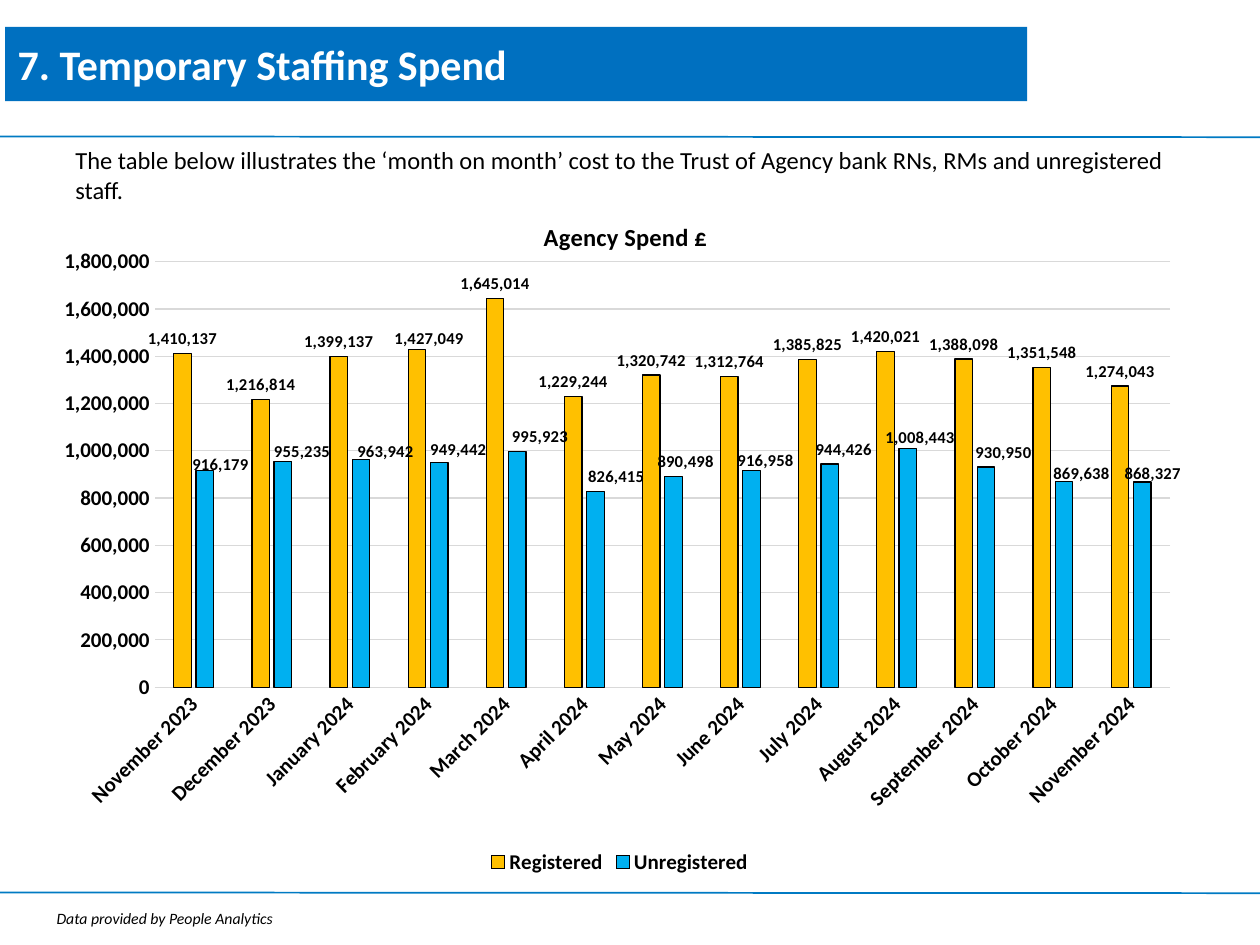
from lxml import etree
from pptx import Presentation
from pptx import util as u
from pptx.chart.data import CategoryChartData
from pptx.dml.color import RGBColor
from pptx.enum import chart as ch, shapes, text
from pptx.oxml import parse_xml
from pptx.oxml.ns import nsdecls, qn

Pt = u.Pt
THEME = dict(font="Calibri", ink="000000", white="FFFFFF", bar="0070C0", rule="007AC3",
             grid="D9D9D9", gold="FFC000", sky="00B0F0",
             head=24, body=14, axis=12, label=9.5, note=9)
TITLE = "7. Temporary Staffing Spend"
INTRO = ("The table below illustrates the ‘month on month’ cost to the Trust of "
         "Agency bank RNs, RMs and unregistered staff.")
NOTE = "Data provided by People Analytics"
HEAD = "Agency Spend £"
MONTHS = ["November 2023", "December 2023", "January 2024", "February 2024", "March 2024",
          "April 2024", "May 2024", "June 2024", "July 2024", "August 2024",
          "September 2024", "October 2024", "November 2024"]
SPEND = [
    ("Registered", "gold",
     [1410137, 1216814, 1399137, 1427049, 1645014, 1229244, 1320742,
      1312764, 1385825, 1420021, 1388098, 1351548, 1274043],
     {3: (7, 2)}),
    ("Unregistered", "sky",
     [916179, 955235, 963942, 949442, 995923, 826415, 890498,
      916958, 944426, 1008443, 930950, 869638, 868327],
     dict(enumerate([(9, 5), (11, 3), (14, 4), (11, 1), (13, 0), (12, 0), (7, 0),
                     (8, 3), (8, 0), (7, 2), (10, 0), (10, 4), (6, 4)]))),
]
CHART = (25.2, 111.6, 658, 391)
RULES = (78, 510)


def rgb(key):
    return RGBColor.from_string(THEME[key])


def style(font, size, color="ink", bold=False, italic=False):
    font.name, font.size = THEME["font"], Pt(THEME[size])
    font.bold, font.italic = bold, italic
    font.color.rgb = rgb(color)


def write(slide, words, box, size, fill=None, anchor=text.MSO_ANCHOR.TOP, **look):
    spot = [Pt(n) for n in box]
    if fill:
        shape = slide.shapes.add_shape(shapes.MSO_SHAPE.RECTANGLE, *spot)
        shape.shadow.inherit = False
        shape.fill.solid()
        shape.fill.fore_color.rgb = rgb(fill)
        shape.line.fill.background()
    else:
        shape = slide.shapes.add_textbox(*spot)
    frame = shape.text_frame
    frame.word_wrap, frame.vertical_anchor = True, anchor
    para = frame.paragraphs[0]
    para.alignment = text.PP_ALIGN.LEFT
    run = para.add_run()
    run.text = words
    style(run.font, size, **look)


def rule(slide, top):
    line = slide.shapes.add_connector(shapes.MSO_CONNECTOR.STRAIGHT,
                                      0, Pt(top), Pt(720), Pt(top + 0.4))
    line.line.color.rgb, line.line.width = rgb("rule"), Pt(1)
    etree.SubElement(line._element.spPr, qn("a:effectLst"))


def layout(x, y, w=None, h=None, inner=False):
    edge = "" if w is None else '<c:xMode val="edge"/><c:yMode val="edge"/>'
    size = "" if w is None or h is None else f'<c:w val="{w}"/><c:h val="{h}"/>'
    area = '<c:layoutTarget val="inner"/>' if inner else ""
    return parse_xml(f'<c:layout {nsdecls("c")}><c:manualLayout>{area}{edge}'
                     f'<c:x val="{x}"/><c:y val="{y}"/>{size}</c:manualLayout></c:layout>')


def place(node, after, item):
    for old in node.findall(qn("c:layout")):
        node.remove(old)
    if after is None:
        node.insert(0, item)
    else:
        node.find(qn(after)).addnext(item)


def tag(label):
    style(label.font, "label", bold=True)
    label.position = ch.XL_LABEL_POSITION.OUTSIDE_END


def paint(series, color, shifts):
    series.format.fill.solid()
    series.format.fill.fore_color.rgb = rgb(color)
    series.format.line.color.rgb, series.format.line.width = rgb("ink"), Pt(0.75)
    series.invert_if_negative = False
    labels = series.data_labels
    labels.show_value = True
    labels.number_format, labels.number_format_is_linked = "#,##0", False
    tag(labels)
    for spot in shifts:
        tag(series.points[spot].data_label)
    for node in labels._element.findall(qn("c:dLbl")):
        x, y = shifts[int(node.find(qn("c:idx")).get("val"))]
        place(node, "c:idx", layout(round(x / CHART[2], 4), round(y / CHART[3], 4)))


def draw(slide):
    data = CategoryChartData(number_format="#,##0")
    data.categories = MONTHS
    for name, _, vals, _ in SPEND:
        data.add_series(name, vals)
    chart = slide.shapes.add_chart(ch.XL_CHART_TYPE.COLUMN_CLUSTERED,
                                   *[Pt(n) for n in CHART], data).chart
    style(chart.font, "axis", bold=True)
    chart.has_title = True
    run = chart.chart_title.text_frame.paragraphs[0].add_run()
    run.text = HEAD
    style(run.font, "body", bold=True)
    place(chart.chart_title._element, "c:tx", layout(0.43, 0.03, 0))
    chart.has_legend = True
    chart.legend.position = ch.XL_LEGEND_POSITION.BOTTOM
    chart.legend.include_in_layout = False
    style(chart.legend.font, "axis", bold=True)

    cat, val = chart.category_axis, chart.value_axis
    for axis in (cat, val):
        axis.major_tick_mark = axis.minor_tick_mark = ch.XL_TICK_MARK.NONE
        style(axis.tick_labels.font, "axis", bold=True)
    cat._element.find(qn("c:txPr")).find(qn("a:bodyPr")).set("rot", "-2700000")
    val.minimum_scale, val.maximum_scale, val.major_unit = 0, 1800000, 200000
    val.tick_labels.number_format = "#,##0"
    val.tick_labels.number_format_is_linked = False
    val.format.line.fill.background()
    for line in (cat.format.line, val.major_gridlines.format.line):
        line.color.rgb, line.width = rgb("grid"), Pt(0.75)

    plot = chart.plots[0]
    plot.gap_width, plot.overlap, plot.vary_by_categories = 219, -27, False
    for series, (_, color, _, shifts) in zip(plot.series, SPEND):
        paint(series, color, shifts)
    area = chart._chartSpace.find(qn("c:chart")).find(qn("c:plotArea"))
    place(area, None, layout(0.096, 0.097, 0.882, 0.622, inner=True))


def main():
    deck = Presentation()
    deck.slide_width, deck.slide_height = Pt(720), Pt(540)
    slide = deck.slides.add_slide(deck.slide_layouts[6])
    for top in RULES:
        rule(slide, top)
    write(slide, TITLE, (3, 15.3, 584, 42.5), "head", fill="bar",
          anchor=text.MSO_ANCHOR.MIDDLE, color="white", bold=True)
    write(slide, NOTE, (25.2, 515.5, 170, 18), "note", italic=True)
    write(slide, INTRO, (36, 79.4, 664, 24.5), "body")
    draw(slide)
    deck.save("out.pptx")


if __name__ == "__main__":
    main()
